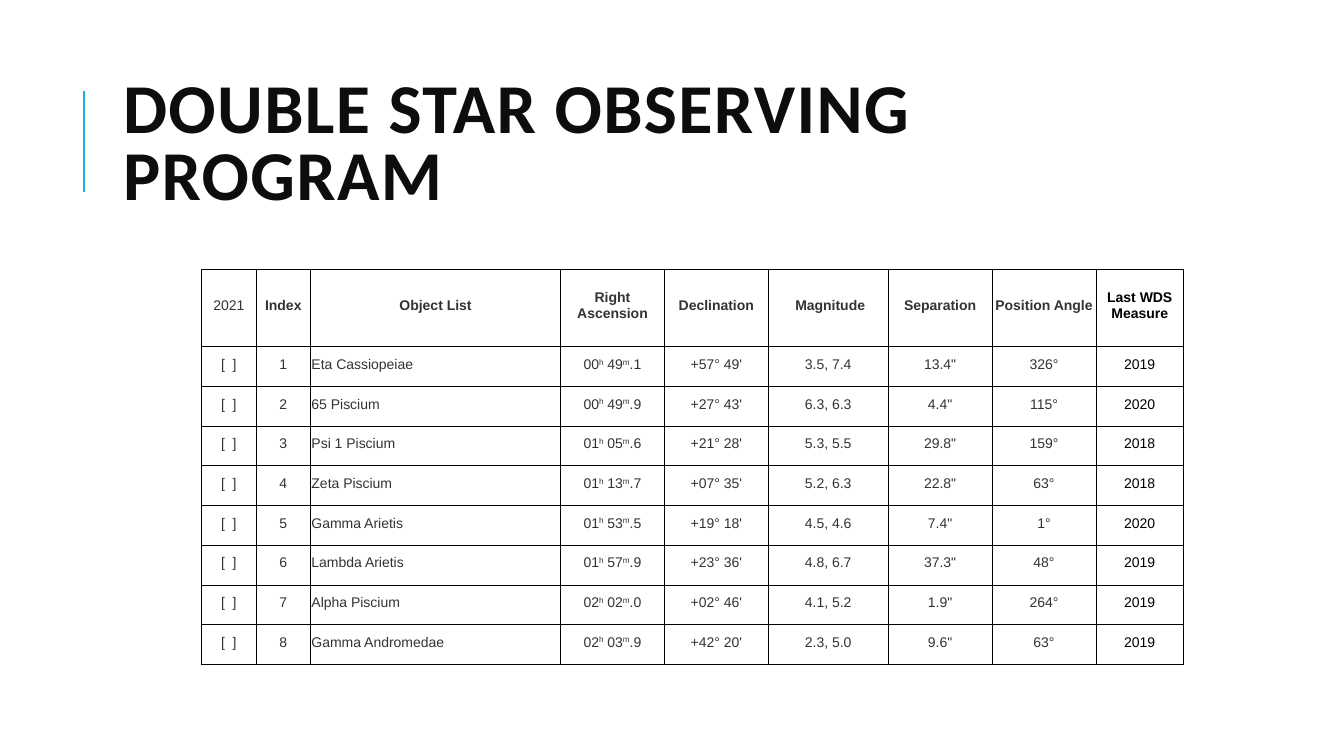
"""Build the slide listing the double stars of an observing program."""

import dataclasses
import itertools

import lxml.etree
import pptx
import pptx.dml.color
import pptx.enum.shapes
import pptx.enum.text
import pptx.oxml.ns
import pptx.table
import pptx.text.text
import pptx.util

PX = 9144
ALIGN = pptx.enum.text.PP_ALIGN
MIDDLE = pptx.enum.text.MSO_ANCHOR.MIDDLE


@dataclasses.dataclass(frozen=True)
class Theme:
    title_font: str = "Calibri"
    table_font: str = "Arial"
    title_size: int = 50
    table_size: int = 10
    title: str = "0D0D0D"
    body: str = "333333"
    black: str = "000000"
    accent: str = "1CADE4"


@dataclasses.dataclass(frozen=True)
class Column:
    heading: str
    width: int
    bold: bool = True
    heading_color: str = Theme.body
    color: str = Theme.body
    align: ALIGN = ALIGN.CENTER
    superscript: str = ""


@dataclasses.dataclass(frozen=True)
class Star:
    name: str
    ascension: str
    declination: str
    magnitude: str
    separation: str
    angle: str
    measured: str


THEME = Theme()
COLUMNS = [
    Column("2021", 54, bold=False),
    Column("Index", 54),
    Column("Object List", 248, align=ALIGN.LEFT),
    Column("Right Ascension", 103, superscript="hm"),
    Column("Declination", 103),
    Column(" Magnitude", 119),
    Column("Separation", 103),
    Column("Position Angle", 103),
    Column("Last WDS Measure", 87, heading_color=THEME.black, color=THEME.black),
]
STARS = [
    Star("Eta Cassiopeiae", "00h 49m.1", "+57° 49'", "3.5, 7.4", '13.4"', "326°", "2019"),
    Star("65 Piscium", "00h 49m.9", "+27° 43'", "6.3, 6.3", '4.4"', "115°", "2020"),
    Star("Psi 1 Piscium", "01h 05m.6", "+21° 28'", "5.3, 5.5", '29.8"', "159°", "2018"),
    Star("Zeta Piscium", "01h 13m.7", "+07° 35'", "5.2, 6.3", '22.8"', "63°", "2018"),
    Star("Gamma Arietis", "01h 53m.5", "+19° 18'", "4.5, 4.6", '7.4"', "1°", "2020"),
    Star("Lambda Arietis", "01h 57m.9", "+23° 36'", "4.8, 6.7", '37.3"', "48°", "2019"),
    Star("Alpha Piscium", "02h 02m.0", "+02° 46'", "4.1, 5.2", '1.9"', "264°", "2019"),
    Star("Gamma Andromedae", "02h 03m.9", "+42° 20'", "2.3, 5.0", '9.6"', "63°", "2019"),
]


def px(n: float) -> pptx.util.Emu:
    """Turn px into EMU."""
    return pptx.util.Emu(round(n * PX))


def write(tf: pptx.text.text.TextFrame, text: str, *, font: str, size: int, color: str,
          bold: bool = False, align: ALIGN = ALIGN.LEFT, line_spacing: float = 1.0,
          tracking: int = 0, superscript: str = "") -> None:
    """Write one formatted paragraph, raising the superscript letters."""
    p = tf.paragraphs[0]
    p.alignment = align
    p.line_spacing = line_spacing
    for raised, letters in itertools.groupby(text, lambda c: c in superscript):
        r = p.add_run()
        r.text = "".join(letters)
        r.font.name = font
        r.font.size = pptx.util.Pt(size)
        r.font.bold = bold
        r.font.color.rgb = pptx.dml.color.RGBColor.from_string(color)
        if tracking:
            r.font._element.set("spc", str(tracking * 100))
        if raised:
            r.font._element.set("baseline", "30000")


def format_cell(cell: pptx.table._Cell) -> None:
    """Give a cell its margins, empty fill and thin black borders."""
    cell.margin_left = cell.margin_top = cell.margin_right = px(1)
    cell.margin_bottom = px(5)
    cell.vertical_anchor = MIDDLE
    cell.fill.background()
    qn = pptx.oxml.ns.qn
    tcPr = cell._tc.get_or_add_tcPr()
    for i, side in enumerate(("lnL", "lnR", "lnT", "lnB")):
        ln = lxml.etree.Element(qn(f"a:{side}"), w=str(pptx.util.Pt(0.5)))
        fill = lxml.etree.SubElement(ln, qn("a:solidFill"))
        lxml.etree.SubElement(fill, qn("a:srgbClr"), val=THEME.black)
        tcPr.insert(i, ln)


def add_title(s: pptx.slide.Slide, text: str) -> None:
    """Place the title and the accent line beside it."""
    sp = s.shapes.title
    sp.left, sp.top, sp.width, sp.height = px(112), px(64), px(1063), px(164)
    tf = sp.text_frame
    tf.word_wrap = True
    tf.auto_size = pptx.enum.text.MSO_AUTO_SIZE.NONE
    tf.vertical_anchor = MIDDLE
    write(tf, text, font=THEME.title_font, size=THEME.title_size, color=THEME.title,
          bold=True, line_spacing=0.8, tracking=1)
    line = s.shapes.add_connector(pptx.enum.shapes.MSO_CONNECTOR.STRAIGHT,
                                  px(83), px(190), px(83), px(90))
    line.line.color.rgb = pptx.dml.color.RGBColor.from_string(THEME.accent)
    line.line.width = pptx.util.Pt(1.5)
    lxml.etree.SubElement(line._element.spPr, pptx.oxml.ns.qn("a:effectLst"))


def add_star_table(s: pptx.slide.Slide, stars: list[Star]) -> None:
    """Draw the heading row and one row for each star."""
    height, header = 392, 77
    table = s.shapes.add_table(len(stars) + 1, len(COLUMNS), px(200), px(267),
                               px(sum(c.width for c in COLUMNS)), px(height)).table
    table.first_row = table.horz_banding = False
    for row in table.rows:
        row.height = px((height - header) / len(stars))
    table.rows[0].height = px(header)
    rows = [("[  ]", str(n), *dataclasses.astuple(star)) for n, star in enumerate(stars, 1)]
    for j, column in enumerate(COLUMNS):
        table.columns[j].width = px(column.width)
        heading = table.cell(0, j)
        format_cell(heading)
        write(heading.text_frame, column.heading, font=THEME.table_font,
              size=THEME.table_size, color=column.heading_color, bold=column.bold,
              align=ALIGN.CENTER)
        for i, values in enumerate(rows, 1):
            cell = table.cell(i, j)
            format_cell(cell)
            write(cell.text_frame, values[j], font=THEME.table_font, size=THEME.table_size,
                  color=column.color, align=column.align, superscript=column.superscript)


def main() -> None:
    """Build and save the presentation."""
    prs = pptx.Presentation()
    prs.slide_width, prs.slide_height = px(1333), px(750)
    s = prs.slides.add_slide(prs.slide_layouts.get_by_name("Title Only"))
    add_title(s, "DOUBLE STAR OBSERVING PROGRAM")
    add_star_table(s, STARS)
    prs.save("out.pptx")


if __name__ == "__main__":
    main()
